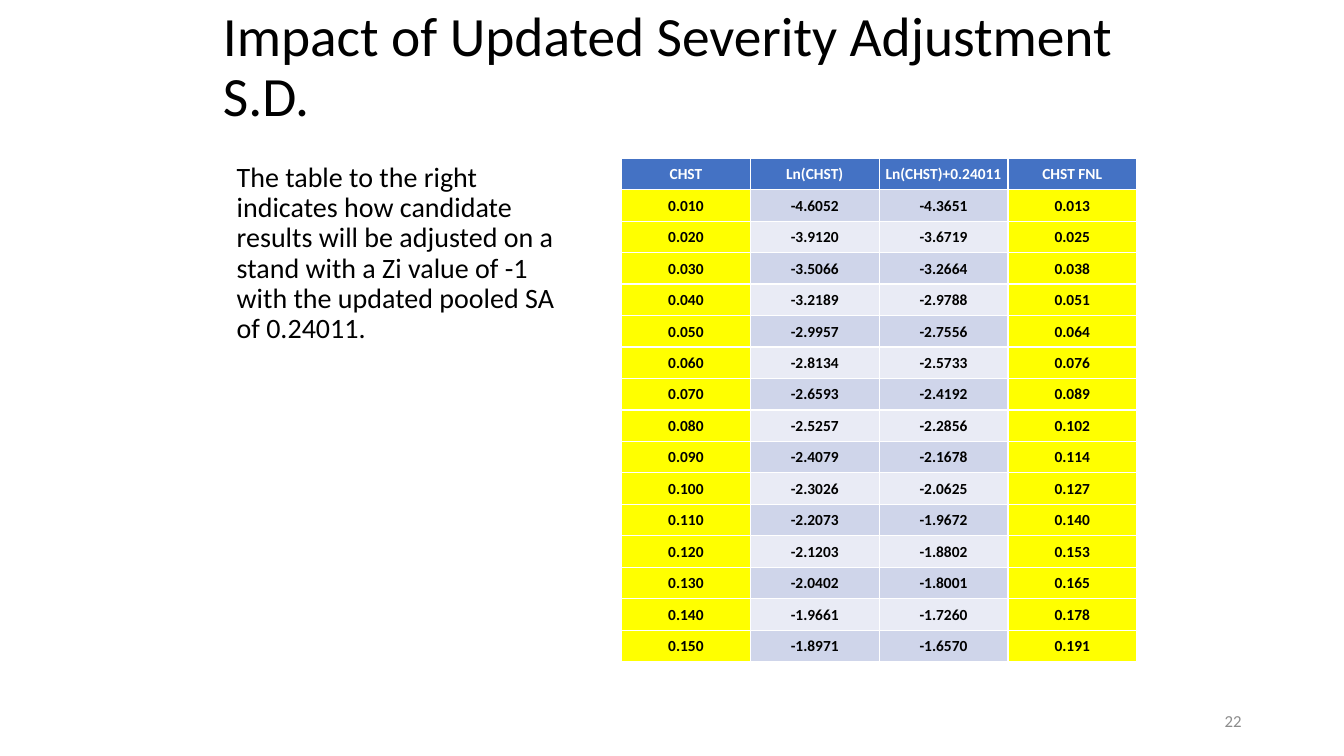
"""Build the slide on the updated severity adjustment."""
from pptx import Presentation
from pptx.dml.color import RGBColor
from pptx.enum.text import MSO_ANCHOR, MSO_AUTO_SIZE, PP_ALIGN
from pptx.util import Pt

TITLE = "Impact of Updated Severity Adjustment S.D."
NOTE = ("The table to the right indicates how candidate results will be "
        "adjusted on a stand with a Zi value of -1 with the updated pooled "
        "SA of 0.24011.")
PAGE = "22"
HEAD = ("CHST", "Ln(CHST)", "Ln(CHST)+0.24011", "CHST FNL")
DATA = [
    ("0.010", "-4.6052", "-4.3651", "0.013"),
    ("0.020", "-3.9120", "-3.6719", "0.025"),
    ("0.030", "-3.5066", "-3.2664", "0.038"),
    ("0.040", "-3.2189", "-2.9788", "0.051"),
    ("0.050", "-2.9957", "-2.7556", "0.064"),
    ("0.060", "-2.8134", "-2.5733", "0.076"),
    ("0.070", "-2.6593", "-2.4192", "0.089"),
    ("0.080", "-2.5257", "-2.2856", "0.102"),
    ("0.090", "-2.4079", "-2.1678", "0.114"),
    ("0.100", "-2.3026", "-2.0625", "0.127"),
    ("0.110", "-2.2073", "-1.9672", "0.140"),
    ("0.120", "-2.1203", "-1.8802", "0.153"),
    ("0.130", "-2.0402", "-1.8001", "0.165"),
    ("0.140", "-1.9661", "-1.7260", "0.178"),
    ("0.150", "-1.8971", "-1.6570", "0.191"),
]

BLACK = RGBColor(0, 0, 0)
WHITE = RGBColor(255, 255, 255)
GRAY = RGBColor(0x8C, 0x8C, 0x8C)
BLUE = RGBColor(0x44, 0x72, 0xC4)
YELLOW = RGBColor(255, 255, 0)
BANDS = (RGBColor(0xCF, 0xD5, 0xEA), RGBColor(0xE9, 0xEB, 0xF5))

LEFT, CENTER, RIGHT = PP_ALIGN.LEFT, PP_ALIGN.CENTER, PP_ALIGN.RIGHT
TOP, MIDDLE = MSO_ANCHOR.TOP, MSO_ANCHOR.MIDDLE
FIXED = MSO_AUTO_SIZE.NONE

COL_W, ROW_H = 92, 22.5
CELL = {"margin_left": Pt(0.7), "margin_right": Pt(0.7),
        "margin_top": Pt(0.7), "margin_bottom": Pt(0),
        "vertical_anchor": MIDDLE}


def apply(item, values):
    """Set each named attribute."""
    for name, value in values.items():
        setattr(item, name, value)


def write(frame, text, size, color, para, bold=False):
    """Put one styled paragraph in a text frame."""
    line = frame.paragraphs[0]
    apply(line, para)
    run = line.add_run()
    run.text = text
    apply(run.font, {"name": "Calibri", "size": Pt(size), "bold": bold})
    run.font.color.rgb = color


def place(shape, box, anchor):
    """Position a text shape and fix its frame."""
    apply(shape, dict(zip(("left", "top", "width", "height"), map(Pt, box))))
    apply(shape.text_frame, {"word_wrap": True, "auto_size": FIXED,
                             "vertical_anchor": anchor})
    return shape.text_frame


def fill_table(shapes):
    """Add the table of adjusted results."""
    rows = [HEAD] + DATA
    table = shapes.add_table(len(rows), len(HEAD), Pt(444), Pt(113),
                             Pt(COL_W * len(HEAD)),
                             Pt(ROW_H * len(rows))).table
    for col in table.columns:
        col.width = Pt(COL_W)
    for r, row in enumerate(rows):
        table.rows[r].height = Pt(ROW_H)
        for c, text in enumerate(row):
            cell = table.cell(r, c)
            apply(cell, CELL)
            if r == 0:
                fill = BLUE
            elif c in (0, len(HEAD) - 1):
                fill = YELLOW
            else:
                fill = BANDS[(r - 1) % 2]
            cell.fill.solid()
            cell.fill.fore_color.rgb = fill
            write(cell.text_frame, text, 11, BLACK if r else WHITE,
                  {"alignment": CENTER}, True)


def main():
    """Assemble and save the slide."""
    deck = Presentation()
    apply(deck, {"slide_width": Pt(960), "slide_height": Pt(540)})
    slide = deck.slides.add_slide(deck.slide_layouts[5])
    shapes = slide.shapes
    write(place(shapes.title, (152, 18, 690, 62.5), MIDDLE), TITLE, 39.6,
          BLACK, {"alignment": LEFT, "line_spacing": 0.9})
    texts = [
        (PAGE, (678, 500.5, 216, 28.75), MIDDLE, 12, GRAY,
         {"alignment": RIGHT}),
        (NOTE, (162, 113, 252, 360), TOP, 20, BLACK,
         {"alignment": LEFT, "line_spacing": 0.9, "space_before": Pt(10)}),
    ]
    for text, box, anchor, size, color, para in texts:
        shape = shapes.add_textbox(*map(Pt, box))
        write(place(shape, box, anchor), text, size, color, para)
    fill_table(shapes)
    deck.save("out.pptx")


if __name__ == "__main__":
    main()
